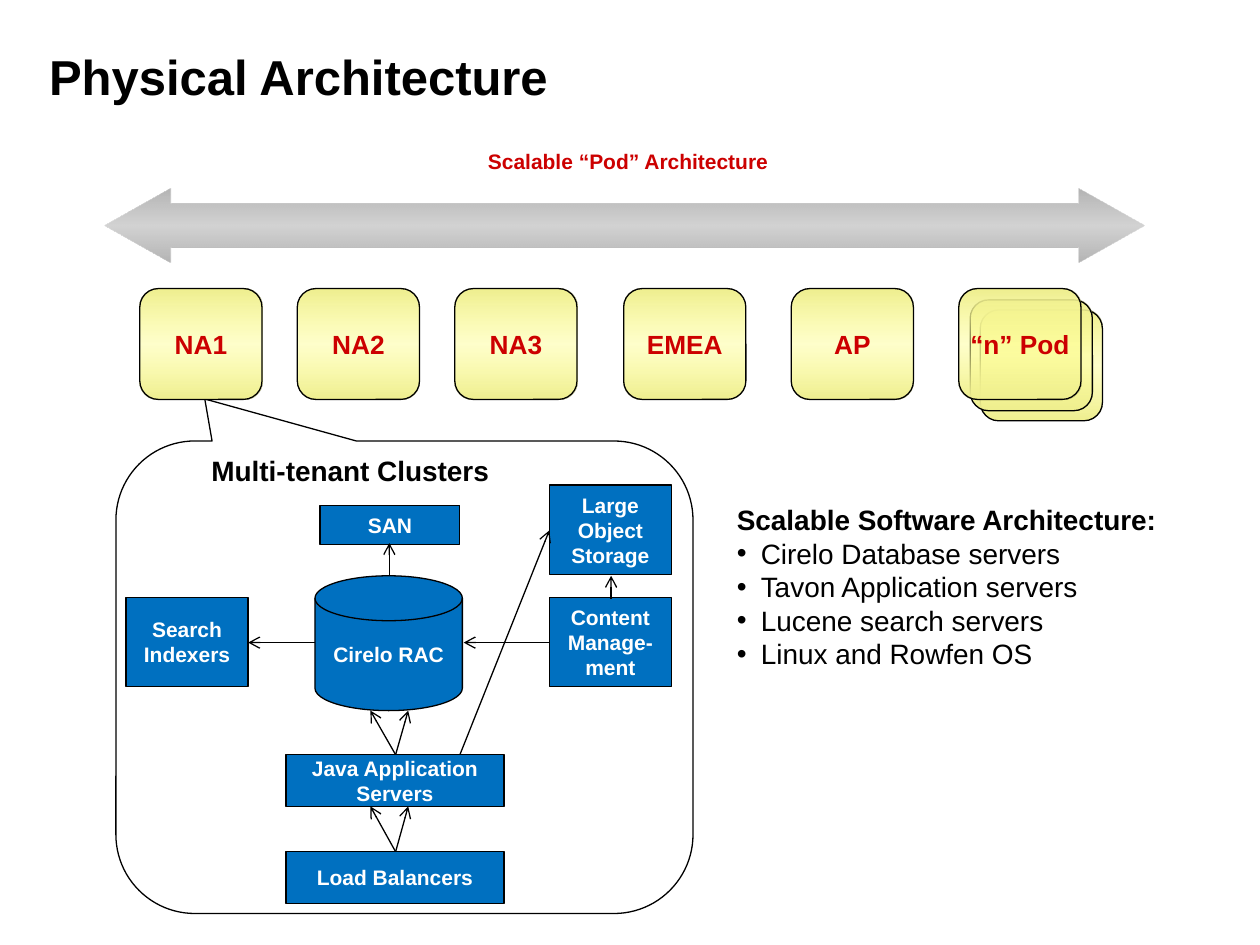
from pptx import Presentation
from pptx.dml.color import RGBColor
from pptx.enum.shapes import MSO_CONNECTOR, MSO_SHAPE
from pptx.enum.text import MSO_ANCHOR, MSO_AUTO_SIZE, PP_ALIGN
from pptx.oxml import parse_xml
from pptx.oxml.ns import nsdecls, qn
from pptx.util import Emu, Pt

EMU_PER_PX = 9144  # 100 px to the inch
CENTER, LEFT = PP_ALIGN.CENTER, PP_ALIGN.LEFT
MIDDLE, TOP = MSO_ANCHOR.MIDDLE, MSO_ANCHOR.TOP
GROW, FIXED = MSO_AUTO_SIZE.SHAPE_TO_FIT_TEXT, MSO_AUTO_SIZE.NONE
RECTANGLE, ROUNDED = MSO_SHAPE.RECTANGLE, MSO_SHAPE.ROUNDED_RECTANGLE
DISK, DOUBLE_ARROW = MSO_SHAPE.FLOWCHART_MAGNETIC_DISK, MSO_SHAPE.LEFT_RIGHT_ARROW
CALLOUT = MSO_SHAPE.ROUNDED_RECTANGULAR_CALLOUT
STRAIGHT = MSO_CONNECTOR.STRAIGHT

BLACK, WHITE, RED, BLUE = "000000", "FFFFFF", "CC0000", "0070C0"
POD_GRADIENT = ("EFEF8F", "FFFF99", 50)
ARROW_GRADIENT = ("B4B4B4", "C0C0C0", 70)


def px(length):
    return Emu(length * EMU_PER_PX)


def color(value):
    return RGBColor.from_string(value)


class SlideBuilder:
    font_name = "Arial"
    line_width = Pt(0.75)

    def __init__(self, slide):
        self.slide = slide

    def format_paragraph(self, paragraph, size, text_color, bold=True, align=CENTER):
        paragraph.alignment = align
        for run in paragraph.runs:
            run.font.name = self.font_name
            run.font.size = Pt(size)
            run.font.bold = bold
            run.font.color.rgb = color(text_color)

    def title(self, text, left, top, width, height):
        shape = self.slide.shapes.title
        shape.left, shape.top, shape.width, shape.height = map(px, (left, top, width, height))
        frame = shape.text_frame
        frame.text = text
        frame.auto_size = FIXED
        frame.vertical_anchor = MIDDLE
        frame.margin_left = frame.margin_top = frame.margin_bottom = px(6)
        self.format_paragraph(frame.paragraphs[0], 28, BLACK, align=LEFT)

    def text_box(self, lines, left, top, width, height, size, text_color=BLACK, align=LEFT):
        """Write a bold first line; any further lines become bullets."""
        shape = self.slide.shapes.add_textbox(*map(px, (left, top, width, height)))
        frame = shape.text_frame
        frame.word_wrap = True
        frame.auto_size = GROW
        frame.vertical_anchor = TOP
        frame.text = "\n".join(lines)
        for index, paragraph in enumerate(frame.paragraphs):
            if index:
                self.bullet(paragraph, 19)
            self.format_paragraph(paragraph, size, text_color, index == 0, align)

    def bullet(self, paragraph, indent):
        properties = paragraph._p.get_or_add_pPr()
        properties.set("marL", str(px(indent)))
        properties.set("indent", str(-px(indent)))
        properties.append(parse_xml(f'<a:buFont {nsdecls("a")} typeface="Arial"/>'))
        properties.append(parse_xml(f'<a:buChar {nsdecls("a")} char="•"/>'))

    def shape(self, kind, left, top, width, height, fill=None, outlined=True, adjustments=()):
        shape = self.slide.shapes.add_shape(kind, *map(px, (left, top, width, height)))
        shape.shadow.inherit = False
        for index, value in enumerate(adjustments):
            shape.adjustments[index] = value
        if fill:
            shape.fill.solid()
            shape.fill.fore_color.rgb = color(fill)
        else:
            shape.fill.background()
        if outlined:
            shape.line.color.rgb = color(BLACK)
            shape.line.width = self.line_width
        else:
            shape.line.fill.background()
        return shape

    def gradient(self, shape, edge, middle, opacity):
        """Fill from edge to a translucent middle and back, top to bottom."""
        shape.fill.gradient()
        shape.fill.gradient_angle = 90
        gradient_fill = shape._element.spPr.find(qn("a:gradFill"))
        stops = parse_xml(
            f'<a:gsLst {nsdecls("a")}>'
            f'<a:gs pos="0"><a:srgbClr val="{edge}"/></a:gs>'
            f'<a:gs pos="50000"><a:srgbClr val="{middle}">'
            f'<a:alpha val="{opacity * 1000}"/></a:srgbClr></a:gs>'
            f'<a:gs pos="100000"><a:srgbClr val="{edge}"/></a:gs></a:gsLst>')
        gradient_fill.replace(gradient_fill.find(qn("a:gsLst")), stops)

    def label(self, shape, text, size, text_color, wrap=True):
        frame = shape.text_frame
        frame.word_wrap = wrap
        frame.vertical_anchor = MIDDLE
        frame.text = text
        self.format_paragraph(frame.paragraphs[0], size, text_color)

    def pod(self, left, top, text=""):
        shape = self.shape(ROUNDED, left, top, 97, 88, adjustments=[0.167])
        self.gradient(shape, *POD_GRADIENT)
        if text:
            self.label(shape, text, 15, RED, wrap=False)

    def node(self, text, left, top, width, height, kind=RECTANGLE):
        self.label(self.shape(kind, left, top, width, height, BLUE), text, 12, WHITE)

    def arrow(self, *points):
        connector = self.slide.shapes.add_connector(STRAIGHT, *map(px, points))
        connector.line.color.rgb = color(BLACK)
        connector.line.width = self.line_width
        connector.line._get_or_add_ln().append(
            parse_xml(f'<a:tailEnd {nsdecls("a")} type="arrow"/>'))
        connector._element.spPr.append(parse_xml(f'<a:effectLst {nsdecls("a")}/>'))


def main():
    presentation = Presentation()
    presentation.slide_width, presentation.slide_height = px(1000), px(750)
    builder = SlideBuilder(presentation.slides.add_slide(presentation.slide_layouts[5]))

    builder.shape(CALLOUT, 92, 350, 458, 375, adjustments=[-0.346, -0.589, 0.167])
    builder.title("Physical Architecture", 33, 0, 900, 120)
    builder.text_box(["Scalable “Pod” Architecture"], 264, 113, 469, 40, 12, RED, CENTER)

    scale_arrow = builder.shape(DOUBLE_ARROW, 83, 150, 825, 58, outlined=False,
                                adjustments=[0.588, 0.91])
    builder.gradient(scale_arrow, *ARROW_GRADIENT)

    pod_top = 229
    pods = {"NA1": 111, "NA2": 236, "NA3": 361, "EMEA": 495, "AP": 628}
    for name, left in pods.items():
        builder.pod(left, pod_top, name)
    for offset, name in ((17, ""), (9, ""), (0, "“n” Pod")):
        builder.pod(761 + offset, pod_top + offset, name)

    builder.text_box(["Scalable Software Architecture:", "Cirelo Database servers",
                      "Tavon Application servers", "Lucene search servers",
                      "Linux and Rowfen OS"], 575, 394, 400, 144, 16)
    builder.text_box(["Multi-tenant Clusters"], 158, 355, 308, 37, 16)

    builder.node("Cirelo RAC", 250, 457, 117, 107, DISK)
    builder.node("SAN", 254, 401, 111, 31)
    for text, left, top in (("Search\vIndexers", 100, 474),
                            ("Large Object Storage", 436, 385),
                            ("Content Manage-ment", 436, 474)):
        builder.node(text, left, top, 97, 71)
    for text, top in (("Java Application Servers", 599), ("Load Balancers", 676)):
        builder.node(text, 227, top, 173, 41)

    builder.arrow(309, 457, 309, 431)  # database to SAN
    builder.arrow(250, 510, 197, 510)  # database to search indexers
    builder.arrow(436, 510, 368, 510)  # content management to database
    builder.arrow(485, 475, 485, 457)  # content management to object storage
    builder.arrow(365, 599, 436, 421)  # application servers to object storage
    for start, end in ((599, 564), (676, 640)):
        for target in (294, 324):
            builder.arrow(314, start, target, end)

    presentation.save("out.pptx")


if __name__ == "__main__":
    main()
